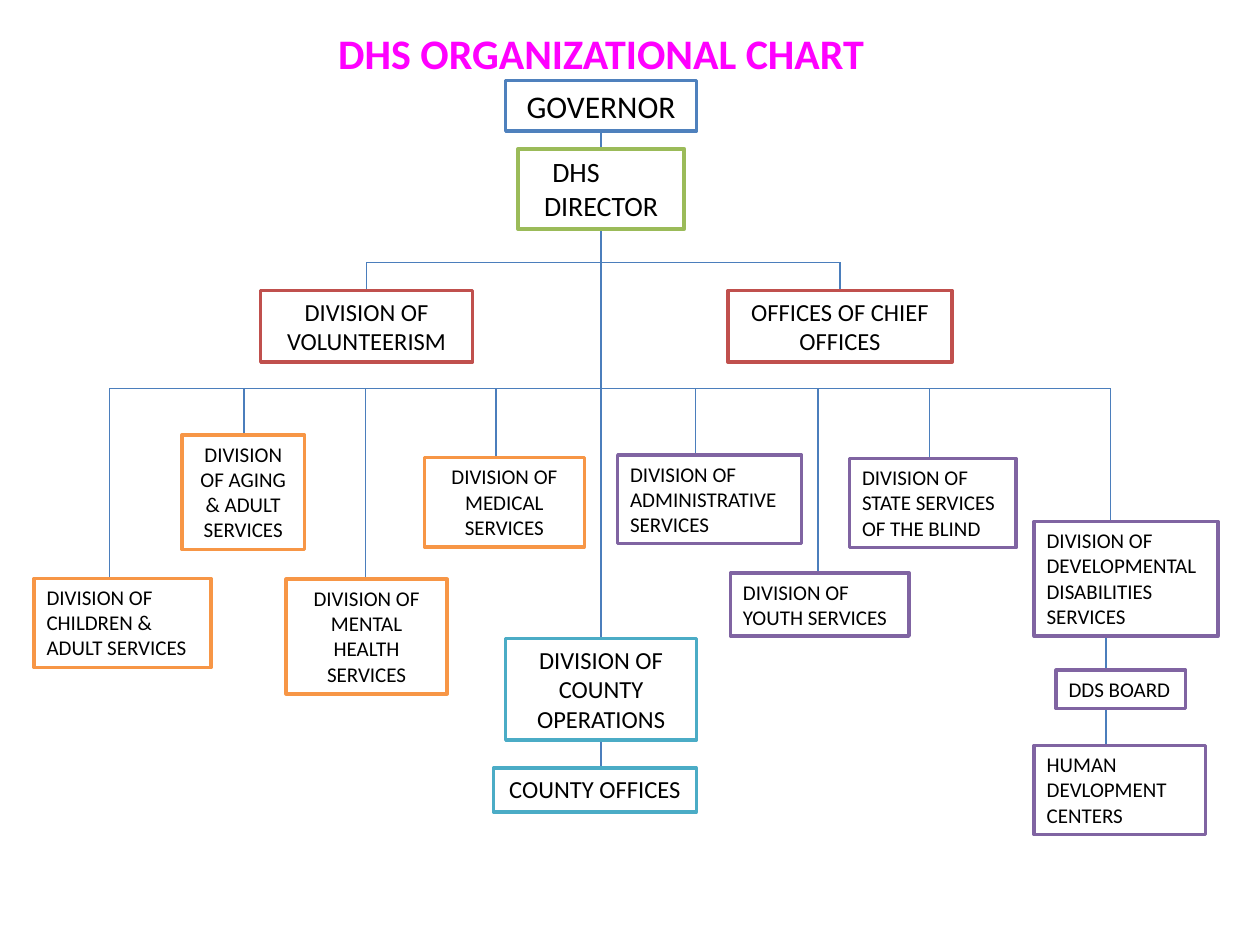
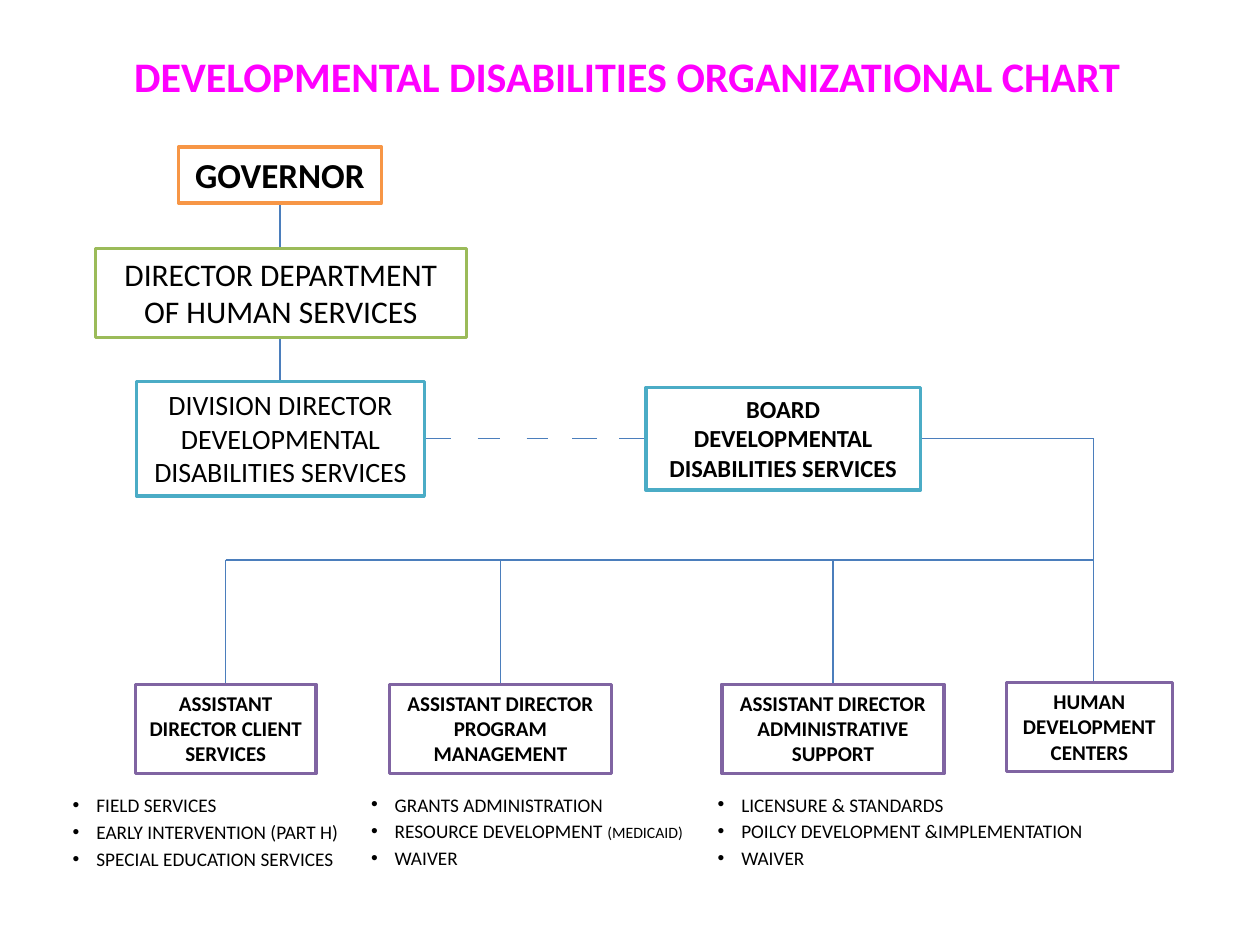
from lxml import etree
from pptx import Presentation
from pptx.dml.color import RGBColor
from pptx.enum import shapes, text
from pptx.oxml import ns
from pptx.util import Pt

FONT = "Calibri"
HUES = {"title": "FF00FF", "ink": "000000", "paper": "FFFFFF", "line": "4B7EBC",
        "blue": "4F81BD", "green": "9BBB59", "red": "C0504D", "teal": "4BACC6",
        "orange": "F79646", "purple": "8064A2"}
LEFT, BOLD = {"left": True}, {"bold": True}
SHIFT = {"shift": 12.5}  # first line starts left, pushed in by this much

# Boxes: words, size, hue, (left, top, width, height), style
# Stems: x, start (a box to leave or a height), box to reach
# Bars: left, right, height
# Lists: (left, top, width, height), items made of (words, size) runs
CHARTS = [
    {
        "title": ("DHS ORGANIZATIONAL CHART", (186, 13, 315, 34)),
        "boxes": {
            "gov": ("GOVERNOR", 18, "blue", (289, 46, 109, 29), {}),
            "chief": ("DHS\nDIRECTOR", 16, "green", (296, 85, 95, 46), SHIFT),
            "help": ("DIVISION OF VOLUNTEERISM", 14, "red", (149, 166, 121, 41), {}),
            "staff": ("OFFICES OF CHIEF OFFICES", 14, "red", (416, 166, 128, 41), {}),
            "county": ("DIVISION OF COUNTY OPERATIONS", 14, "teal", (289, 365, 109, 58), {}),
            "local": ("COUNTY OFFICES", 14, "teal", (282, 439, 116, 25), {}),
            "child": ("DIVISION OF CHILDREN & ADULT SERVICES", 12, "orange",
                      (19.5, 330.5, 101, 51), LEFT),
            "aging": ("DIVISION OF AGING & ADULT SERVICES", 12, "orange",
                      (104, 248.5, 70, 65.5), {}),
            "mental": ("DIVISION OF MENTAL HEALTH SERVICES", 12, "orange",
                       (163.5, 331, 92, 65.5), {}),
            "health": ("DIVISION OF MEDICAL SERVICES", 12, "orange",
                       (242.5, 261.5, 91.5, 51), {}),
            "admin": ("DIVISION OF ADMINISTRATIVE SERVICES", 12, "purple",
                      (353, 260, 105, 50.5), LEFT),
            "youth": ("DIVISION OF YOUTH SERVICES", 12, "purple",
                      (417.5, 327.5, 102, 36), LEFT),
            "blind": ("DIVISION OF STATE SERVICES OF THE BLIND", 12, "purple",
                      (485.5, 262, 95, 51), LEFT),
            "dds": ("DIVISION OF DEVELOPMENTAL DISABILITIES SERVICES", 12, "purple",
                    (591, 298, 105, 65.5), LEFT),
            "board": ("DDS BOARD", 12, "purple", (603.5, 383, 74, 22), LEFT),
            "homes": ("HUMAN DEVLOPMENT CENTERS", 12, "purple", (591, 426, 98, 51), LEFT),
        },
        "stems": [
            (343.5, "gov", "chief"), (343.5, "chief", "county"), (343.5, "county", "local"),
            (209.5, 150, "help"), (480, 150, "staff"),
            (62.5, 222, "child"), (139.5, 222, "aging"), (209, 222, "mental"),
            (283.5, 222, "health"), (397.5, 222, "admin"), (467.5, 222, "youth"),
            (531, 222, "blind"), (634.5, 222, "dds"),
            (632, "dds", "board"), (632, "board", "homes"),
        ],
        "bars": [(209.5, 480, 150), (62.5, 634.5, 222)],
        "lists": [],
    },
    {
        "title": ("DEVELOPMENTAL DISABILITIES ORGANIZATIONAL CHART", (66, 22, 585, 42)),
        "boxes": {
            "gov": ("GOVERNOR", 20, "orange", (102, 84, 116, 32), BOLD),
            "chief": ("DIRECTOR DEPARTMENT OF HUMAN SERVICES", 18, "green",
                      (54.5, 142, 212, 51), {}),
            "head": ("DIVISION DIRECTOR DEVELOPMENTAL DISABILITIES SERVICES", 16, "teal",
                     (78, 218, 164.5, 65.5), {}),
            "board": ("BOARD DEVELOPMENTAL DISABILITIES SERVICES", 14, "teal",
                      (369, 221.5, 157, 58.5), BOLD),
            "client": ("ASSISTANT DIRECTOR CLIENT SERVICES", 12, "purple",
                       (77.5, 391, 103, 51), BOLD),
            "plan": ("ASSISTANT DIRECTOR PROGRAM MANAGEMENT", 12, "purple",
                     (222.5, 391, 127, 51), BOLD),
            "admin": ("ASSISTANT DIRECTOR ADMINISTRATIVE SUPPORT", 12, "purple",
                      (412.5, 391, 127, 51), BOLD),
            "homes": ("HUMAN DEVELOPMENT CENTERS", 12, "purple", (575, 390, 95, 51), BOLD),
        },
        "stems": [
            (160, "gov", "chief"), (160, "chief", "head"), (625, 250.5, "homes"),
            (129, 320, "client"), (286, 320, "plan"), (476, 320, "admin"),
        ],
        "bars": [
            (243, 258, 250.5), (273, 286, 250.5), (301, 313, 250.5), (327, 341, 250.5),
            (354, 369, 250.5), (526, 625, 250.5), (129, 625, 320),
        ],
        "lists": [
            ((34.5, 450, 189, 52.5), [[("FIELD SERVICES", 11)],
                                      [("EARLY INTERVENTION (PART H)", 11)],
                                      [("SPECIAL EDUCATION SERVICES", 11)]]),
            ((205, 449.5, 196, 52.5), [[("GRANTS ADMINISTRATION", 11)],
                                       [("RESOURCE DEVELOPMENT ", 11), ("(MEDICAID)", 9)],
                                       [("WAIVER", 11)]]),
            ((403, 449.5, 228, 52.5), [[("LICENSURE & STANDARDS", 11)],
                                       [("POILCY DEVELOPMENT &IMPLEMENTATION", 11)],
                                       [("WAIVER", 11)]]),
        ],
    },
]


def hue(name):
    return RGBColor.from_string(HUES[name])


def points(spot):
    return [Pt(n) for n in spot]


def add_run(para, words, size, bold=False, ink="ink"):
    run = para.add_run()
    run.text = words
    font = run.font
    font.name, font.size, font.bold = FONT, Pt(size), bold
    font.color.rgb = hue(ink)


def indent(para, left, first=0):
    props = para._p.get_or_add_pPr()
    props.set("marL", str(Pt(left)))
    props.set("indent", str(Pt(first)))
    return props


def add_title(slide, words, spot):
    head = slide.shapes.title
    head.left, head.top, head.width, head.height = points(spot)
    frame = head.text_frame
    frame.margin_left = frame.margin_right = 0
    frame.vertical_anchor = text.MSO_ANCHOR.MIDDLE
    para = frame.paragraphs[0]
    para.alignment = text.PP_ALIGN.CENTER
    add_run(para, words, 24, True, "title")


def add_line(slide, x1, y1, x2, y2):
    line = slide.shapes.add_connector(shapes.MSO_CONNECTOR.STRAIGHT, *points((x1, y1, x2, y2)))
    line.line.color.rgb = hue("line")
    line.line.width = Pt(0.75)
    etree.SubElement(line._element.spPr, ns.qn("a:effectLst"))


def add_box(slide, words, size, edge, spot, style):
    box = slide.shapes.add_shape(shapes.MSO_SHAPE.RECTANGLE, *points(spot))
    box.shadow.inherit = False
    box.fill.solid()
    box.fill.fore_color.rgb = hue("paper")
    box.line.color.rgb = hue(edge)
    box.line.width = Pt(2)
    frame = box.text_frame
    frame.word_wrap = True
    frame.vertical_anchor = text.MSO_ANCHOR.TOP
    for i, row in enumerate(words.split("\n")):
        para = frame.add_paragraph() if i else frame.paragraphs[0]
        shift = style.get("shift", 0) if i == 0 else 0
        left = shift or style.get("left")
        para.alignment = text.PP_ALIGN.LEFT if left else text.PP_ALIGN.CENTER
        if shift:
            indent(para, shift)
        add_run(para, row, size, style.get("bold", False))


def add_list(slide, spot, items):
    frame = slide.shapes.add_textbox(*points(spot)).text_frame
    frame.word_wrap = True
    for i, runs in enumerate(items):
        para = frame.add_paragraph() if i else frame.paragraphs[0]
        if i:
            para.space_before = Pt(2.2)
        props = indent(para, 13.5, -13.5)
        etree.SubElement(props, ns.qn("a:buFont")).set("typeface", "Arial")
        etree.SubElement(props, ns.qn("a:buChar")).set("char", "•")
        for words, size in runs:
            add_run(para, words, size)


def add_chart(deck, chart):
    slide = deck.slides.add_slide(deck.slide_layouts[5])
    add_title(slide, *chart["title"])
    spots = {key: box[3] for key, box in chart["boxes"].items()}
    for x, start, end in chart["stems"]:
        if start in spots:
            start = spots[start][1] + spots[start][3]
        add_line(slide, x, start, x, spots[end][1])
    for left, right, y in chart["bars"]:
        add_line(slide, left, y, right, y)
    for box in chart["boxes"].values():
        add_box(slide, *box)
    for spot, items in chart["lists"]:
        add_list(slide, spot, items)


def main():
    deck = Presentation()
    deck.slide_width, deck.slide_height = Pt(720), Pt(540)
    for chart in CHARTS:
        add_chart(deck, chart)
    deck.save("out.pptx")


if __name__ == "__main__":
    main()
